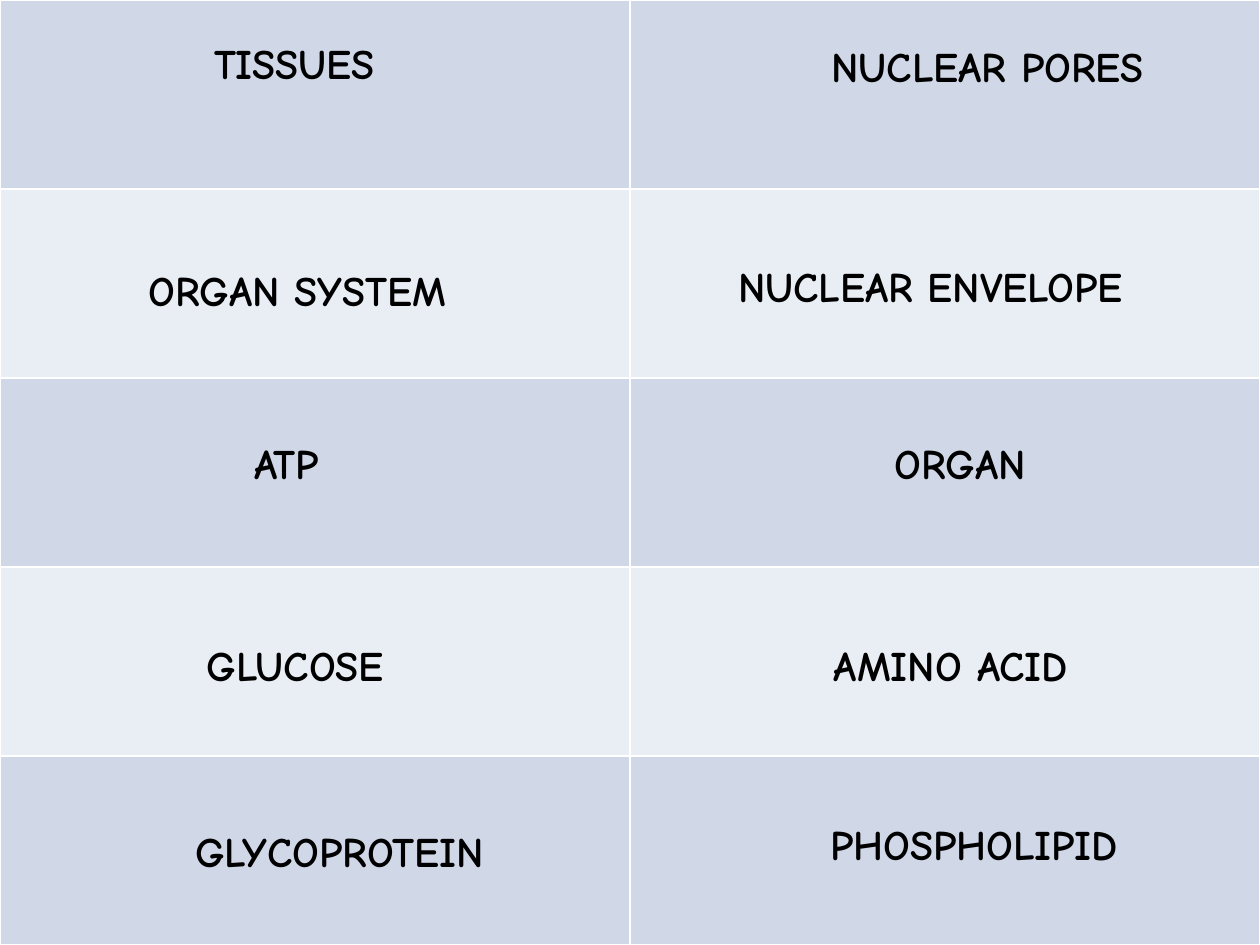
"""Build a slide of biology term cards on a two-column table."""
import pptx
import pptx.dml.color
import pptx.enum.text
import pptx.oxml
import pptx.oxml.ns
import pptx.util
from pptx.util import Inches


def rgb(value):
    return pptx.dml.color.RGBColor.from_string(value)


class Cards:
    font = "Comic Neue"
    size = 24
    ink = "000000"
    border = "FFFFFF"
    bands = ("D0D8E8", "E9EDF4")

    def __init__(self, slide):
        self.s = slide

    def add_borders(self, cell):
        tcPr = cell._tc.get_or_add_tcPr()
        for i, side in enumerate(("lnL", "lnR", "lnT", "lnB")):
            tcPr.insert(i, pptx.oxml.parse_xml(
                f'<a:{side} {pptx.oxml.ns.nsdecls("a")} w="{pptx.util.Pt(1)}">'
                f'<a:solidFill><a:srgbClr val="{self.border}"/></a:solidFill></a:{side}>'))

    def add_grid(self, rows, cols, width, height):
        table = self.s.shapes.add_table(
            rows, cols, 0, 0, Inches(width), Inches(height)).table
        table.first_row = False
        for i, row in enumerate(table.rows):
            for cell in row.cells:
                cell.fill.solid()
                cell.fill.fore_color.rgb = rgb(self.bands[i % len(self.bands)])
                self.add_borders(cell)

    def add_term(self, text, left, top, width):
        sp = self.s.shapes.add_textbox(
            Inches(left), Inches(top), Inches(width), Inches(0.5))
        tf = sp.text_frame
        tf.word_wrap = False
        tf.auto_size = pptx.enum.text.MSO_AUTO_SIZE.SHAPE_TO_FIT_TEXT
        p = tf.paragraphs[0]
        p.text = text
        p.font.name = self.font
        p.font.size = pptx.util.Pt(self.size)
        p.font.bold = True
        p.font.color.rgb = rgb(self.ink)


TERMS = [
    ("TISSUES", 1.6, 0.25, 1.78),
    ("NUCLEAR PORES", 6.5, 0.27, 3.04),
    ("GLUCOSE", 1.54, 5.03, 1.78),
    ("GLYCOPROTEIN", 1.45, 6.5, 2.87),
    ("AMINO ACID", 6.52, 5.03, 2.5),
    ("PHOSPHOLIPID", 6.49, 6.45, 2.82),
    ("ATP", 1.92, 3.42, 0.86),
    ("ORGAN", 7, 3.42, 1.43),
    ("NUCLEAR ENVELOPE", 5.76, 2.02, 3.7),
    ("ORGAN SYSTEM", 1.08, 2.05, 3),
]


def main():
    prs = pptx.Presentation()
    prs.slide_width, prs.slide_height = Inches(10), Inches(7.5)
    cards = Cards(prs.slides.add_slide(prs.slide_layouts[6]))
    cards.add_grid(rows=5, cols=2, width=10, height=7.5)
    for term in TERMS:
        cards.add_term(*term)
    prs.save("out.pptx")


if __name__ == "__main__":
    main()
